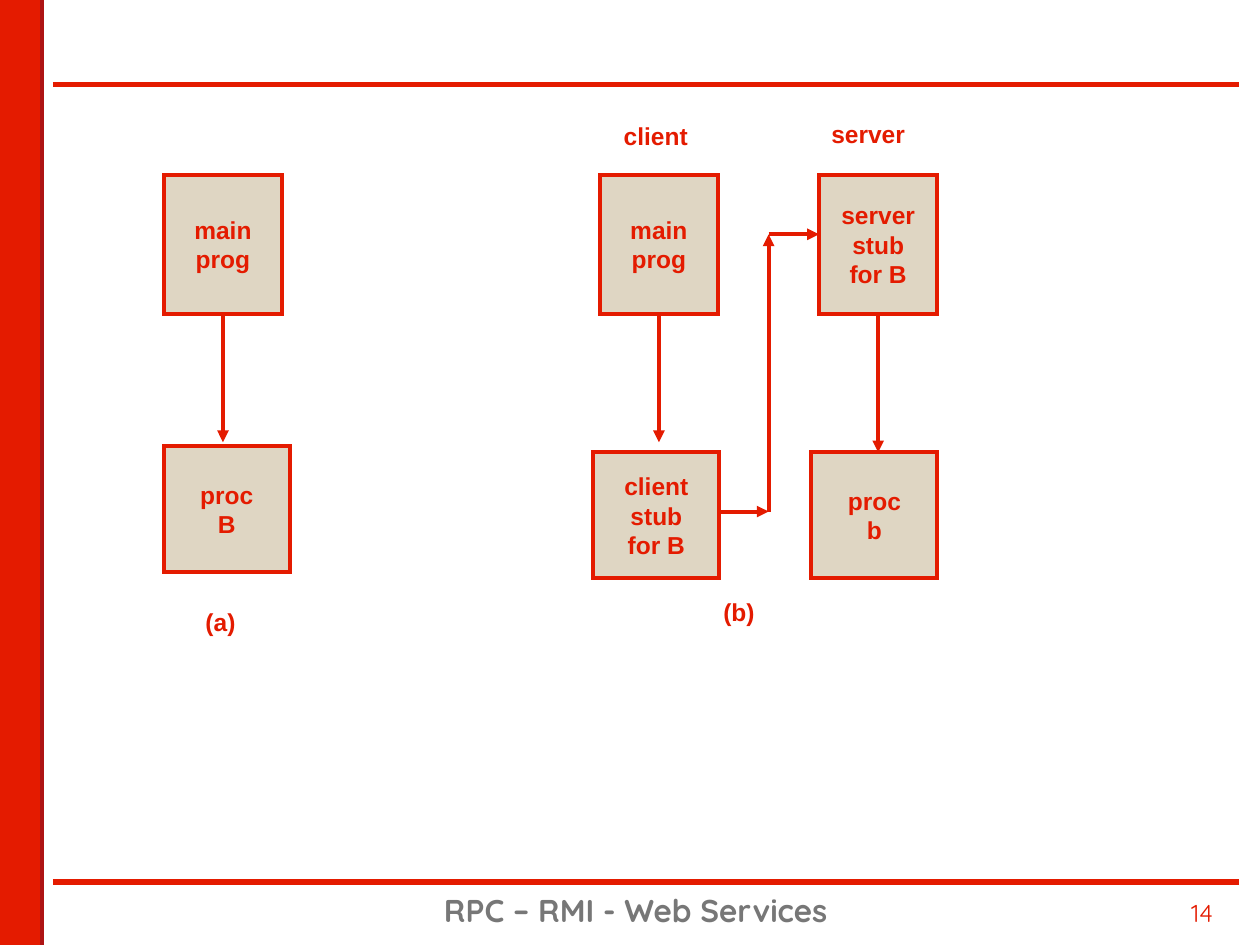
from dataclasses import dataclass

from lxml import etree
from pptx import Presentation
from pptx import util as u
from pptx.dml.color import RGBColor
from pptx.enum import shapes, text
from pptx.oxml.ns import qn

EMU_PER_PX = 9144  # 100 px to the inch
COLORS = {"red": "E41B00", "dark_red": "AE1414", "sand": "DFD6C3", "grey": "777777"}
BOTTOM = 2


@dataclass(frozen=True)
class Box:
    left: int
    top: int
    width: int
    height: int
    lines: tuple[str, ...] = ()


@dataclass(frozen=True)
class Style:
    size: int = 14
    font: str = "Arial"
    color: str = "red"
    bold: bool = True
    wrap: bool = False
    anchor: text.MSO_ANCHOR = text.MSO_ANCHOR.BOTTOM


BOX_STYLE = Style(anchor=text.MSO_ANCHOR.MIDDLE)


def px(length: int) -> u.Emu:
    return u.Emu(length * EMU_PER_PX)


def rgb(name: str) -> RGBColor:
    return RGBColor.from_string(COLORS[name])


def place(box: Box) -> tuple:
    return px(box.left), px(box.top), px(box.width), px(box.height)


def write(frame, lines: tuple[str, ...], style: Style) -> None:
    frame.word_wrap = style.wrap
    frame.vertical_anchor = style.anchor
    frame.margin_left = frame.margin_right = 0
    for index, line in enumerate(lines):
        paragraph = frame.paragraphs[0] if index == 0 else frame.add_paragraph()
        paragraph.alignment = text.PP_ALIGN.CENTER
        run = paragraph.add_run()
        run.text = line
        run.font.size = u.Pt(style.size)
        run.font.name = style.font
        run.font.bold = style.bold
        run.font.color.rgb = rgb(style.color)


def add_label(slide, box: Box, style: Style = Style()) -> None:
    frame = slide.shapes.add_textbox(*place(box)).text_frame
    write(frame, box.lines, style)
    if not style.wrap:
        frame.auto_size = text.MSO_AUTO_SIZE.SHAPE_TO_FIT_TEXT


def add_box(slide, box: Box, fill: str = "sand"):
    rect = slide.shapes.add_shape(shapes.MSO_SHAPE.RECTANGLE, *place(box))
    rect.shadow.inherit = False
    rect.fill.solid()
    rect.fill.fore_color.rgb = rgb(fill)
    rect.line.color.rgb = rgb("red")
    rect.line.width = u.Pt(2.25)
    etree.SubElement(rect.line._get_or_add_ln(), qn("a:miter"), lim="800000")
    write(rect.text_frame, box.lines, BOX_STYLE)
    return rect


def add_line(slide, start: tuple[int, int], end: tuple[int, int],
             color: str = "red", width: float = 2.25, arrow: bool = False):
    line = slide.shapes.add_connector(
        shapes.MSO_CONNECTOR.STRAIGHT, *map(px, start + end))
    line.line.color.rgb = rgb(color)
    line.line.width = u.Pt(width)
    if arrow:
        etree.SubElement(line.line._get_or_add_ln(), qn("a:tailEnd"), type="triangle")
    etree.SubElement(line._element.spPr, qn("a:effectLst"))
    return line


def add_call(slide, caller: Box, callee: Box, arrow_end: int) -> None:
    """Draw two boxes and the arrow leading down from the caller."""
    caller_rect = add_box(slide, caller)
    add_box(slide, callee)
    middle = caller.left + caller.width // 2
    arrow = add_line(slide, (middle, caller.top + caller.height),
                     (middle, arrow_end), arrow=True)
    arrow.begin_connect(caller_rect, BOTTOM)


def add_frame(slide) -> None:
    """Draw the side bar, the rules and the footer."""
    for y in (67, 700):
        add_line(slide, (42, y), (983, y), width=3)
    add_box(slide, Box(0, 0, 33, 750), fill="red")
    add_line(slide, (33, 0), (33, 750), color="dark_red")
    add_label(slide, Box(925, 708, 58, 33, ("14",)),
              Style(font="Quicksand", bold=False, wrap=True))
    add_label(slide, Box(267, 700, 475, 42, ("RPC – RMI - Web Services",)),
              Style(size=18, font="Quicksand", color="grey", wrap=True))


def upper(left: int, *lines: str) -> Box:
    return Box(left, 139, 94, 110, lines)


def lower(left: int, top: int, *lines: str) -> Box:
    return Box(left, top, 100, 100, lines)


CALLS = (
    (upper(130, "main", "prog"), lower(130, 354, "proc", "B"), 351),
    (upper(476, "main", "prog"), lower(471, 359, "client", "stub", "for B"), 351),
    (upper(650, "server", "stub", "for B"), lower(644, 359, "proc", "b"), 359),
)
CLIENT_TO_SERVER = ((571, 406), (610, 406), (610, 186), (650, 186))
LABELS = (
    Box(485, 91, 71, 33, ("client",)),
    Box(650, 90, 78, 33, ("server",)),
    Box(153, 477, 44, 33, ("(a)",)),
    Box(564, 469, 45, 33, ("(b)",)),
)


def main() -> None:
    deck = Presentation()
    deck.slide_width, deck.slide_height = px(1000), px(750)
    slide = deck.slides.add_slide(deck.slide_layouts[6])
    add_frame(slide)
    for caller, callee, arrow_end in CALLS:
        add_call(slide, caller, callee, arrow_end)
    for start, end in zip(CLIENT_TO_SERVER, CLIENT_TO_SERVER[1:]):
        add_line(slide, start, end, arrow=True)
    for label in LABELS:
        add_label(slide, label)
    deck.save("out.pptx")


if __name__ == "__main__":
    main()
